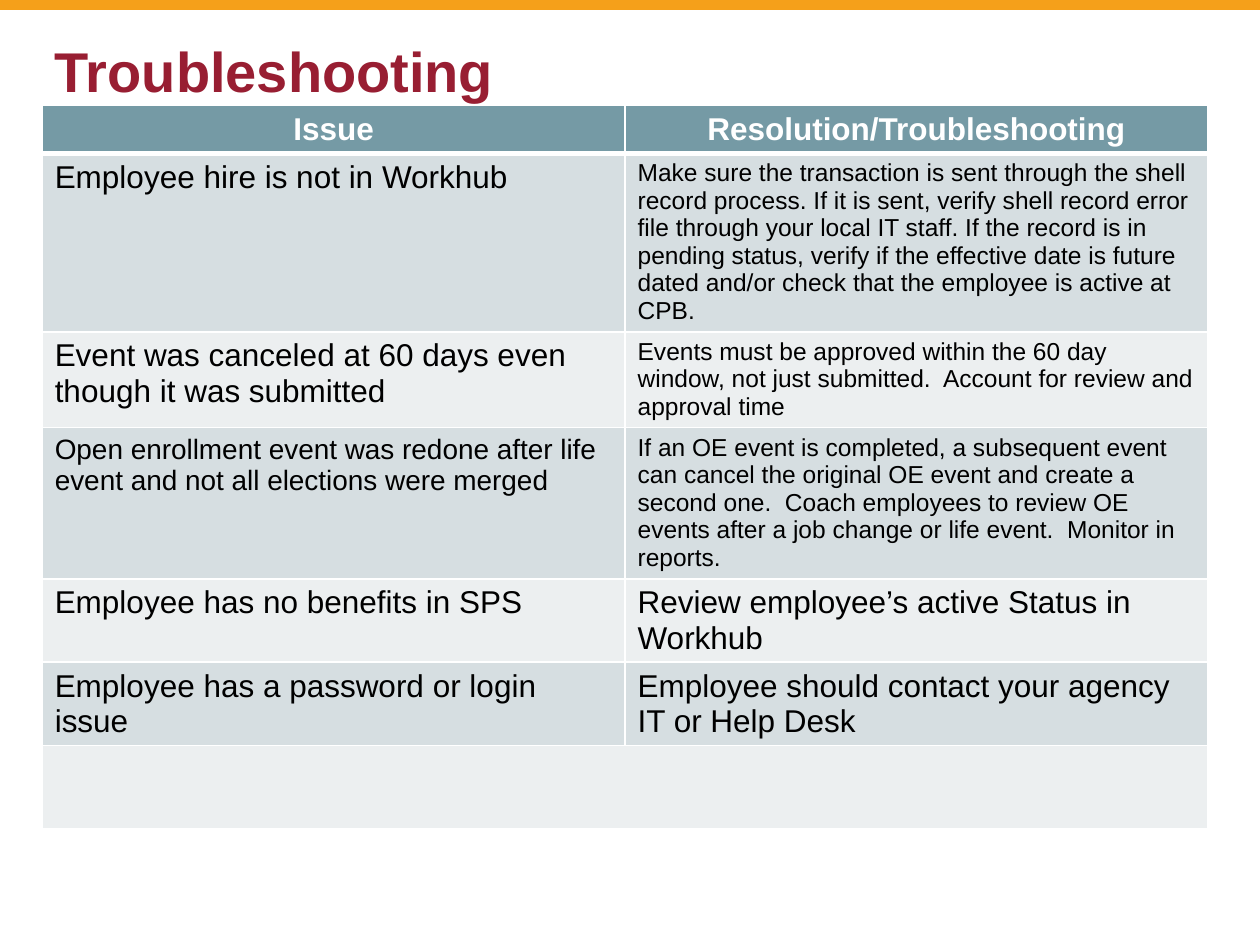
from lxml.etree import SubElement
from pptx import Presentation
from pptx.dml.color import RGBColor
from pptx.enum.shapes import MSO_SHAPE
from pptx.enum.text import MSO_ANCHOR, MSO_AUTO_SIZE, PP_ALIGN
from pptx.oxml.ns import qn
from pptx.util import Cm, Pt

ORANGE = RGBColor(0xF5, 0xA0, 0x1A)
CRIMSON = RGBColor(0x98, 0x1E, 0x32)
TEAL = RGBColor(0x75, 0x9A, 0xA5)
BAND_DARK = RGBColor(0xD6, 0xDE, 0xE1)
BAND_LIGHT = RGBColor(0xEC, 0xEF, 0xF0)
WHITE = RGBColor(0xFF, 0xFF, 0xFF)
BLACK = RGBColor(0, 0, 0)
FONT = "Arial"

HEADERS = ("Issue", "Resolution/Troubleshooting")
# Row height in cm, then text and size of each cell
ROWS = [
    (3.6, ("Employee hire is not in Workhub", 18),
     ("Make sure the transaction is sent through the shell record process. "
      "If it is sent, verify shell record error file through your local IT staff. "
      "If the record is in pending status, verify if the effective date is future "
      "dated and/or check that the employee is active at CPB.", 14)),
    (1.93, ("Event was canceled at 60 days even though it was submitted", 18),
     ("Events must be approved within the 60 day window, not just submitted.  "
      "Account for review and approval time", 14)),
    (3.05, ("Open enrollment event was redone after life event and not all "
            "elections were merged", 16),
     ("If an OE event is completed, a subsequent event can cancel the original "
      "OE event and create a second one.  Coach employees to review OE events "
      "after a job change or life event.  Monitor in reports.", 14)),
    (1.68, ("Employee has no benefits in SPS", 18),
     ("Review employee’s active Status in Workhub", 18)),
    (1.68, ("Employee has a password or login issue", 18),
     ("Employee should contact your agency IT or Help Desk", 18)),
]
HEADER_H, CLOSING_H = 0.97, 1.68


def add_run(p, text, size, color, bold=False):
    r = p.add_run()
    r.text = text
    r.font.name = FONT
    r.font.size = Pt(size)
    r.font.bold = bold
    r.font.color.rgb = color


def add_bar(s, x, y, w, h):
    sp = s.shapes.add_shape(MSO_SHAPE.RECTANGLE, x, y, w, h)
    sp.shadow.inherit = False
    sp.fill.solid()
    sp.fill.fore_color.rgb = ORANGE
    sp.line.fill.background()


def set_title(s, x, y, w, h):
    sp = s.shapes.title
    sp.left, sp.top, sp.width, sp.height = x, y, w, h
    tf = sp.text_frame
    tf.auto_size = MSO_AUTO_SIZE.NONE
    # Top anchor keeps the descender clear of the table
    tf.vertical_anchor = MSO_ANCHOR.TOP
    p = tf.paragraphs[0]
    p.alignment = PP_ALIGN.LEFT
    add_run(p, "Troubleshooting", 32, CRIMSON, bold=True)


def format_cell(cell, fill, bottom=1, top=1):
    # Borders come before the fill in the cell properties
    tcPr = cell._tc.get_or_add_tcPr()
    for side, width in (("L", 1), ("R", 1), ("T", top), ("B", bottom)):
        ln = SubElement(tcPr, qn(f"a:ln{side}"), w=str(Pt(width)))
        solid = SubElement(ln, qn("a:solidFill"))
        SubElement(solid, qn("a:srgbClr"), val=str(WHITE))
    cell.fill.solid()
    cell.fill.fore_color.rgb = fill


def add_issue_table(s, x, y, w):
    heights = [HEADER_H, *(row[0] for row in ROWS), CLOSING_H]
    table = s.shapes.add_table(len(heights), 2, x, y, w, Cm(sum(heights))).table
    for row, height in zip(table.rows, heights):
        row.height = Cm(height)

    # Header row
    for cell, text in zip(table.rows[0].cells, HEADERS):
        format_cell(cell, TEAL, bottom=3)
        p = cell.text_frame.paragraphs[0]
        p.alignment = PP_ALIGN.CENTER
        add_run(p, text, 18, WHITE, bold=True)

    # Banded rows; the last one is empty and merged
    for i in range(1, len(heights)):
        for cell in table.rows[i].cells:
            format_cell(cell, BAND_DARK if i % 2 else BAND_LIGHT,
                        top=3 if i == 1 else 1)
    for i, (_, *cells) in enumerate(ROWS, 1):
        for j, (text, size) in enumerate(cells):
            add_run(table.cell(i, j).text_frame.paragraphs[0], text, size, BLACK)
    last = len(heights) - 1
    table.cell(last, 0).merge(table.cell(last, 1))


def main():
    prs = Presentation()
    prs.slide_width, prs.slide_height = Cm(25.4), Cm(19.05)
    s = prs.slides.add_slide(prs.slide_layouts[5])
    add_bar(s, 0, 0, prs.slide_width, Cm(0.2))
    set_title(s, Cm(0.85), Cm(0.6), Cm(23.92), Cm(1.5))
    add_issue_table(s, Cm(0.85), Cm(2.12), Cm(23.5))
    prs.save("out.pptx")


if __name__ == "__main__":
    main()
